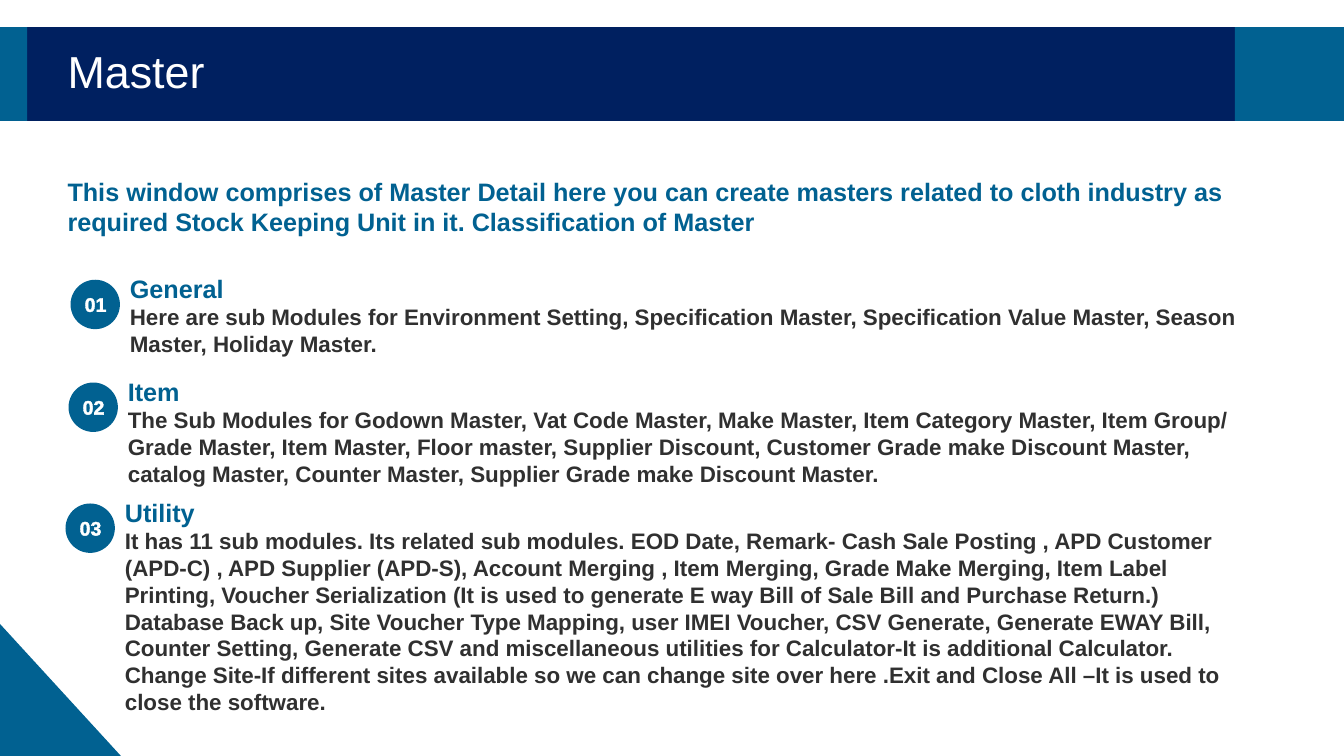
from dataclasses import dataclass

from lxml import etree
from pptx import Presentation
from pptx import util as u
from pptx.dml.color import RGBColor
from pptx.enum import shapes, text
from pptx.oxml.ns import qn


@dataclass(frozen=True)
class Theme:
    """Colours, font and type sizes of the slide."""
    navy: str = "002060"
    blue: str = "016191"
    ink: str = "303030"
    white: str = "FFFFFF"
    font: str = "Arial"
    title: int = 32
    heading: int = 18
    detail: int = 16
    badge: int = 14


T = Theme()
WIDTH, HEIGHT = 13.33, 7.5
COLS, ROWS = 160, 90
BAND_TOP, BAND_H = 3.24, 11.16
TEXT_LEFT = 6.84
SECTION_W, BADGE = 137.16, 5.88

SECTIONS = [
    (14.28, 31.92, 11.28, "General",
     "Here are sub Modules for Environment Setting, Specification Master, "
     "Specification Value Master, Season Master, Holiday Master."),
    (14.04, 44.16, 14.52, "Item",
     "The Sub Modules for Godown Master, Vat Code Master, Make Master, Item "
     "Category Master, Item Group/ Grade Master, Item Master, Floor master, "
     "Supplier Discount, Customer Grade make Discount Master, catalog Master, "
     "Counter Master, Supplier Grade make Discount Master."),
    (13.68, 58.56, 27.48, "Utility",
     "It has 11 sub modules. Its related sub modules. EOD Date, Remark- Cash "
     "Sale Posting , APD Customer (APD-C) , APD Supplier (APD-S), Account "
     "Merging , Item Merging, Grade Make Merging, Item Label Printing, Voucher "
     "Serialization (It is used to generate E way Bill of Sale Bill and "
     "Purchase Return.) Database Back up, Site Voucher Type Mapping, user IMEI "
     "Voucher, CSV Generate, Generate EWAY Bill, Counter Setting, Generate CSV "
     "and miscellaneous utilities for Calculator-It is additional Calculator. "
     "Change Site-If different sites available so we can change site over here "
     ".Exit and Close All –It is used to close the software."),
]


def cells(col, row, cols, rows):
    """Turn a place on the grid into left, top, width and height."""
    cw, rh = WIDTH / COLS, HEIGHT / ROWS
    return [u.Inches(v) for v in (col * cw, row * rh, cols * cw, rows * rh)]


def add_block(s, kind, color, *place):
    """Add a plain filled shape."""
    sp = s.shapes.add_shape(kind, *cells(*place))
    sp.shadow.inherit = False
    sp.fill.solid()
    sp.fill.fore_color.rgb = RGBColor.from_string(color)
    sp.line.fill.background()
    return sp


def write(p, words, size, color, bold=True, align=text.PP_ALIGN.LEFT,
          before=0, spacing=1.0, outline=None):
    """Write formatted text into a paragraph."""
    p.alignment = align
    p.space_before, p.space_after = u.Pt(before), u.Pt(0)
    p.line_spacing = spacing
    r = p.add_run()
    r.text = words
    r.font.name, r.font.size, r.font.bold = T.font, u.Pt(size), bold
    r.font.color.rgb = RGBColor.from_string(color)
    if outline:
        ln = etree.Element(qn("a:ln"), w=str(u.Pt(1)))
        fill = etree.SubElement(ln, qn("a:solidFill"))
        etree.SubElement(fill, qn("a:srgbClr"), val=outline)
        r.font.fill
        r.font._element.insert(0, ln)


def add_text(s, *place):
    """Add a wrapping text box and return its text frame."""
    tf = s.shapes.add_textbox(*cells(*place)).text_frame
    tf.word_wrap = True
    return tf


def place_holder(sp, *place, anchor=text.MSO_ANCHOR.TOP):
    """Move a placeholder to the front and return its first paragraph."""
    sp.left, sp.top, sp.width, sp.height = cells(*place)
    sp.element.getparent().append(sp.element)
    tf = sp.text_frame
    tf.word_wrap, tf.vertical_anchor = True, anchor
    tf.auto_size = text.MSO_AUTO_SIZE.NONE
    return tf.paragraphs[0]


def add_intro(s):
    """Set the opening sentence in the body placeholder without a bullet."""
    p = place_holder(s.placeholders[1], TEXT_LEFT, 20.4, 144.6, 8.52)
    write(p, "This window comprises of Master Detail here you can create "
          "masters related to cloth industry as required Stock Keeping Unit "
          "in it. Classification of Master", T.heading, T.blue)
    pPr = p._p.get_or_add_pPr()
    pPr.set("marL", "0")
    pPr.set("indent", "0")
    etree.SubElement(pPr, qn("a:buNone"))


def add_section(s, number, col, row, rows, heading, detail):
    """Add a numbered badge with its heading and description."""
    left, top = col - BADGE, row + 1.38
    add_block(s, shapes.MSO_SHAPE.OVAL, T.blue, left, top, BADGE, BADGE)
    tf = add_text(s, left + 0.4, top + 0.9, 5.16, 4.08)
    write(tf.paragraphs[0], f"{number:02}", T.badge, T.white,
          align=text.PP_ALIGN.CENTER, outline=T.white)
    tf = add_text(s, col, row, SECTION_W, rows)
    write(tf.paragraphs[0], heading, T.heading, T.blue)
    write(tf.add_paragraph(), detail, T.detail, T.ink)


def add_banner(s):
    """Add the title band with its two end blocks and the title."""
    for color, col, cols in ((T.navy, 0, COLS), (T.blue, 0, 3.24),
                             (T.blue, 147, 13)):
        add_block(s, shapes.MSO_SHAPE.RECTANGLE, color,
                  col, BAND_TOP, cols, BAND_H)
    p = place_holder(s.shapes.title, TEXT_LEFT, 5.52, 116.4, 6.48,
                     anchor=text.MSO_ANCHOR.MIDDLE)
    write(p, "Master", T.title, T.white, bold=False, before=10, spacing=0.9)


def main():
    """Build and save the slide."""
    prs = Presentation()
    prs.slide_width, prs.slide_height = u.Inches(WIDTH), u.Inches(HEIGHT)
    s = prs.slides.add_slide(prs.slide_layouts[1])
    add_banner(s)
    add_intro(s)
    for number, section in enumerate(SECTIONS, 1):
        add_section(s, number, *section)
    add_block(s, shapes.MSO_SHAPE.RIGHT_TRIANGLE, T.blue,
              0, 74.28, 14.4, 15.72)
    prs.save("out.pptx")


if __name__ == "__main__":
    main()
